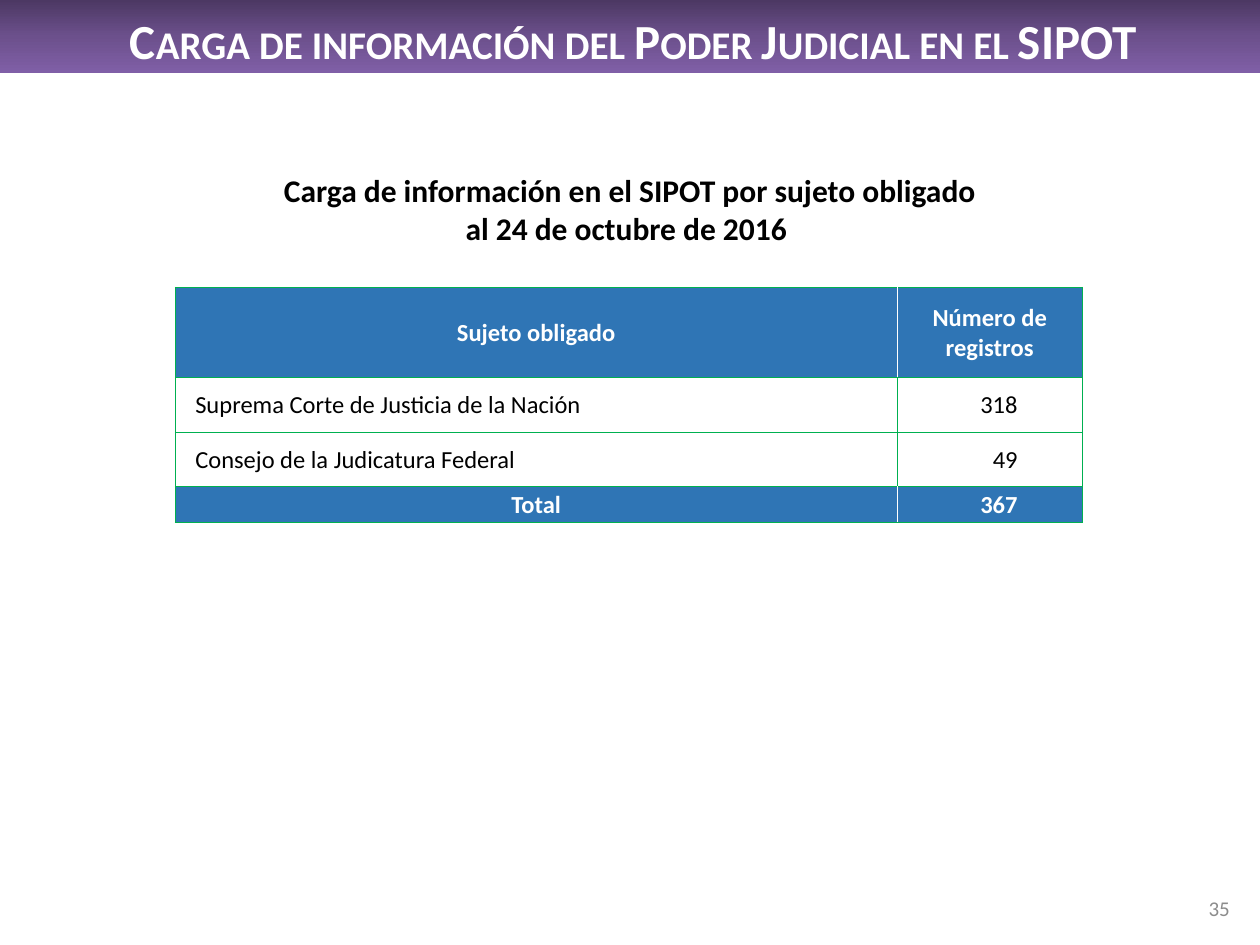
from copy import deepcopy

from lxml.etree import SubElement
from pptx import Presentation
from pptx.dml.color import RGBColor
from pptx.enum.shapes import MSO_SHAPE
from pptx.enum.text import MSO_ANCHOR, PP_ALIGN
from pptx.oxml.ns import qn
from pptx.util import Pt

BLUE, GREEN, WHITE, BLACK = "2F75B5", "00B050", "FFFFFF", "000000"
HEADER = ("Sujeto obligado", "Número de registros")
RECORDS = (
    ("Suprema Corte de Justicia de la Nación", 318),
    ("Consejo de la Judicatura Federal", 49),
)
COLUMN_WIDTHS = (412.6, 105.8)
ROW_HEIGHTS = (51.5, 31.2, 31.2, 20.2)


def color(value):
    """Turn a hex string into a color."""
    return RGBColor.from_string(value)


def write(paragraph, text, size, hex_color, bold=False, align=PP_ALIGN.LEFT):
    """Fill a paragraph with text in one style."""
    paragraph.text = text
    paragraph.alignment = align
    font = paragraph.font
    font.name, font.size, font.bold = "Calibri", Pt(size), bold
    font.color.rgb = color(hex_color)


def add_text(slide, box, text, size, hex_color, anchor=MSO_ANCHOR.TOP, **style):
    """Add a wrapped text box and return its paragraph."""
    frame = slide.shapes.add_textbox(*map(Pt, box)).text_frame
    frame.word_wrap = True
    frame.vertical_anchor = anchor
    write(frame.paragraphs[0], text, size, hex_color, **style)
    return frame.paragraphs[0]


def add_gradient_band(slide, box, hex_colors):
    """Add a rectangle with an evenly spaced three-color vertical gradient."""
    shape = slide.shapes.add_shape(MSO_SHAPE.RECTANGLE, *map(Pt, box))
    shape.shadow.inherit = False
    shape.line.fill.background()
    shape.fill.gradient()
    shape.fill.gradient_angle = 270
    stop_list = shape.fill._fill._gradFill.find(qn("a:gsLst"))
    stop_list.insert(1, deepcopy(stop_list[0]))
    for index, (stop, value) in enumerate(zip(shape.fill.gradient_stops, hex_colors)):
        stop.color.rgb = color(value)
        stop.position = index / 2


def add_small_caps_shadow(paragraph):
    """Give the runs small capitals and a soft dark shadow."""
    for run in paragraph.runs:
        properties = run._r.get_or_add_rPr()
        properties.set("cap", "small")
        effects = SubElement(properties, qn("a:effectLst"))
        shadow = SubElement(effects, qn("a:outerShdw"), blurRad="38100",
                            dist="38100", dir="2700000", algn="tl")
        shade = SubElement(shadow, qn("a:srgbClr"), val=BLACK)
        SubElement(shade, qn("a:alpha"), val="43000")


def set_borders(cell, left, right):
    """Draw thin cell borders, green above and below."""
    properties = cell._tc.get_or_add_tcPr()
    sides = {"a:lnL": left, "a:lnR": right, "a:lnT": GREEN, "a:lnB": GREEN}
    for tag, value in sides.items():
        line = SubElement(properties, qn(tag), w=str(Pt(0.5)))
        fill = SubElement(line, qn("a:solidFill"))
        SubElement(fill, qn("a:srgbClr"), val=value)


def style_cell(cell, text, column, filled, align, margins):
    """Write and format one table cell."""
    cell.vertical_anchor = MSO_ANCHOR.MIDDLE
    cell.margin_left, cell.margin_right = map(Pt, margins)
    cell.margin_top, cell.margin_bottom = Pt(0.7), Pt(0)
    divider = WHITE if filled else GREEN
    set_borders(cell, *((GREEN, divider) if column == 0 else (divider, GREEN)))
    if filled:
        cell.fill.solid()
        cell.fill.fore_color.rgb = color(BLUE)
    else:
        cell.fill.background()
    write(cell.text_frame.paragraphs[0], text, 14, WHITE if filled else BLACK,
          bold=filled, align=align)


def add_records_table(slide, left, top):
    """Add the table of records with its header and total."""
    total = sum(count for _, count in RECORDS)
    rows = [HEADER, *RECORDS, ("Total", total)]
    frame = slide.shapes.add_table(len(rows), len(HEADER), Pt(left), Pt(top),
                                   Pt(sum(COLUMN_WIDTHS)), Pt(sum(ROW_HEIGHTS)))
    table = frame.table
    for column, width in zip(table.columns, COLUMN_WIDTHS):
        column.width = Pt(width)
    for index, (values, height) in enumerate(zip(rows, ROW_HEIGHTS)):
        table.rows[index].height = Pt(height)
        filled = index in (0, len(rows) - 1)
        for column, value in enumerate(values):
            if isinstance(value, int):
                text, align, margins = f"{value} ", PP_ALIGN.RIGHT, (20.2, 33.8)
            elif filled:
                text, align, margins = value, PP_ALIGN.CENTER, (0.7, 0.7)
            else:
                text, align, margins = value, PP_ALIGN.LEFT, (11.5, 11.5)
            style_cell(table.cell(index, column), text, column, filled, align, margins)


def main():
    """Build the slide and save it."""
    presentation = Presentation()
    presentation.slide_width, presentation.slide_height = Pt(720), Pt(540)
    slide = presentation.slides.add_slide(presentation.slide_layouts[6])
    add_gradient_band(slide, (0, 0, 720, 41.8), ("4C3863", "6C508C", "805FA7"))
    add_text(slide, (649.4, 504.7, 60.5, 28.8), "35", 12, "8C8C8C",
             anchor=MSO_ANCHOR.MIDDLE, align=PP_ALIGN.RIGHT)
    title = add_text(slide, (0, 2.2, 723.6, 41),
                     "Carga de información del Poder Judicial en el SIPOT",
                     28, WHITE, bold=True, align=PP_ALIGN.CENTER)
    add_small_caps_shadow(title)
    add_text(slide, (0, 94.3, 720, 51.1),
             "Carga de información en el SIPOT por sujeto obligado\n"
             "al 24 de octubre de 2016 ",
             18, BLACK, bold=True, align=PP_ALIGN.CENTER)
    add_records_table(slide, 100.1, 164.2)
    presentation.save("out.pptx")


if __name__ == "__main__":
    main()
